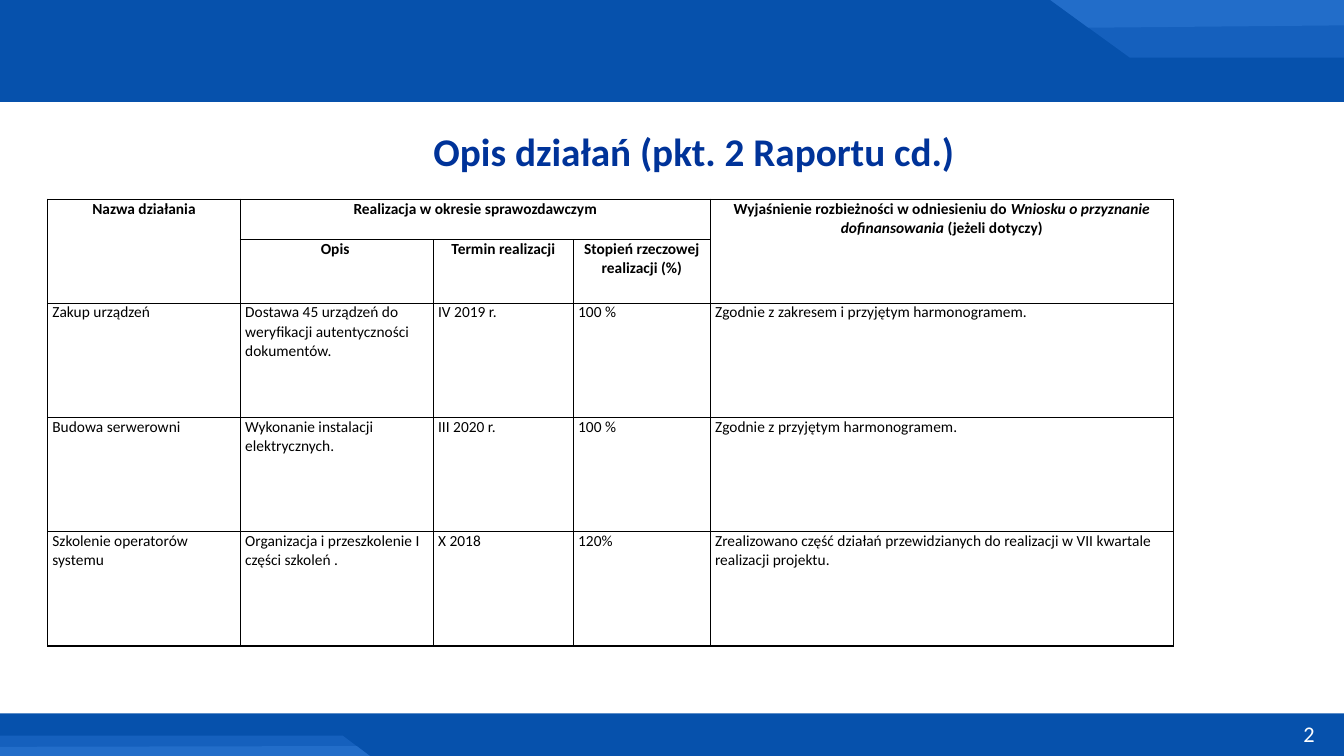
from lxml.etree import SubElement as Sub
from pptx import Presentation
from pptx.dml.color import RGBColor as RGB
from pptx.enum.shapes import MSO_SHAPE as Kind
from pptx.enum.text import MSO_ANCHOR as Anchor, PP_ALIGN as Align
from pptx.oxml.ns import qn
from pptx.util import Cm, Pt

WIDE, HIGH = 33.87, 19.05
FONT = "Calibri"
NAVY, BLUE, LIGHT = "0651AC", "1560BD", "226DC9"
TITLE = "Opis działań (pkt. 2 Raportu cd.)"
NUMBER = "2"

BANDS = [(0, 2.57), (17.98, 1.07)]  # top, height
RIBBONS = [
    (BLUE, [(WIDE, 0), (26.47, 0), (28.47, 1.45), (WIDE, 1.45)]),
    (LIGHT, [(WIDE, 0), (26.47, 0), (27.43, 0.7), (WIDE, 0.64)]),
    (BLUE, [(0, HIGH), (9.32, HIGH), (8.64, 18.54), (0, 18.54)]),
    (LIGHT, [(0, HIGH), (9.32, HIGH), (8.99, 18.8), (0, 18.82)]),
]

COLS = [4.86, 4.86, 3.53, 3.45, 11.67]
ROWS = [1.02, 1.6, 2.88, 2.88, 2.88]
MERGES = [((0, 0), (1, 0)), ((0, 1), (0, 3)), ((0, 4), (1, 4))]
HEADS = 2
# A cell is a list of runs; every second run is italic.
NOTE = ["Wyjaśnienie rozbieżności w odniesieniu do ",
        "Wniosku o przyznanie dofinansowania", " (jeżeli dotyczy)"]
CELLS = [
    [["Nazwa działania"], ["Realizacja w okresie sprawozdawczym"], [], [], NOTE],
    [[], ["Opis "], ["Termin realizacji"], ["Stopień rzeczowej realizacji (%)"], []],
    [["Zakup urządzeń"],
     ["Dostawa 45 urządzeń do weryfikacji autentyczności dokumentów."],
     ["IV 2019 r."], ["100 %"],
     ["Zgodnie z zakresem i przyjętym harmonogramem."]],
    [["Budowa serwerowni"], ["Wykonanie instalacji elektrycznych."],
     ["III 2020 r."], ["100 %"], ["Zgodnie z przyjętym harmonogramem."]],
    [["Szkolenie operatorów systemu"],
     ["Organizacja i przeszkolenie I części szkoleń ."],
     ["X 2018"], ["120%"],
     ["Zrealizowano część działań przewidzianych do realizacji "
      "w VII kwartale realizacji projektu."]],
]


def style(para, size, color, bold=False, align=Align.LEFT):
    para.alignment = align
    font = para.font
    font.name, font.size, font.bold = FONT, Pt(size), bold
    font.color.rgb = RGB.from_string(color)


def paint(shape, color):
    shape.fill.solid()
    shape.fill.fore_color.rgb = RGB.from_string(color)
    shape.line.fill.background()
    shape.shadow.inherit = False


def frame(cell, color="000000"):
    """Draw thin borders on all four sides of a cell."""
    props = cell._tc.get_or_add_tcPr()
    for side in ("lnL", "lnR", "lnT", "lnB"):
        line = Sub(props, qn("a:" + side), w=str(Pt(1)))
        Sub(Sub(line, qn("a:solidFill")), qn("a:srgbClr"), val=color)


def add_bands(shapes):
    for top, high in BANDS:
        band = shapes.add_shape(Kind.RECTANGLE, 0, Cm(top), Cm(WIDE), Cm(high))
        paint(band, NAVY)
    for color, points in RIBBONS:
        first, *rest = [(Cm(x), Cm(y)) for x, y in points]
        path = shapes.build_freeform(*first)
        path.add_line_segments(rest, close=True)
        paint(path.convert_to_shape(), color)


def add_grid(shapes):
    grid = shapes.add_table(len(ROWS), len(COLS), Cm(1.2), Cm(5.02),
                            Cm(sum(COLS)), Cm(sum(ROWS))).table
    grid.first_row = grid.horz_banding = False
    for col, wide in zip(grid.columns, COLS):
        col.width = Cm(wide)
    for row, high in zip(grid.rows, ROWS):
        row.height = Cm(high)
    for r, line in enumerate(CELLS):
        head = r < HEADS
        for c, runs in enumerate(line):
            cell = grid.cell(r, c)
            cell.margin_left = cell.margin_right = Cm(0.12)
            cell.margin_top = cell.margin_bottom = 0
            frame(cell)
            cell.fill.background()
            para = cell.text_frame.paragraphs[0]
            style(para, 11, "000000", head, Align.CENTER if head else Align.LEFT)
            for i, text in enumerate(runs):
                run = para.add_run()
                run.text = text
                if i % 2:
                    run.font.italic = True
    for start, end in MERGES:
        grid.cell(*start).merge(grid.cell(*end))


def main():
    deck = Presentation()
    deck.slide_width, deck.slide_height = Cm(WIDE), Cm(HIGH)
    shapes = deck.slides.add_slide(deck.slide_layouts[5]).shapes
    add_bands(shapes)

    title = shapes.title
    title.left, title.top, title.width, title.height = map(
        Cm, (2.46, 3.07, 30.05, 1.45))
    title.text_frame.text = TITLE
    style(title.text_frame.paragraphs[0], 28, "003399", True, Align.CENTER)

    add_grid(shapes)

    page = shapes.add_textbox(Cm(25.76), Cm(17.98), Cm(7.62), Cm(1.02)).text_frame
    page.word_wrap = True
    page.vertical_anchor = Anchor.MIDDLE
    page.text = NUMBER
    style(page.paragraphs[0], 16, "FFFFFF", align=Align.RIGHT)

    deck.save("out.pptx")


if __name__ == "__main__":
    main()
